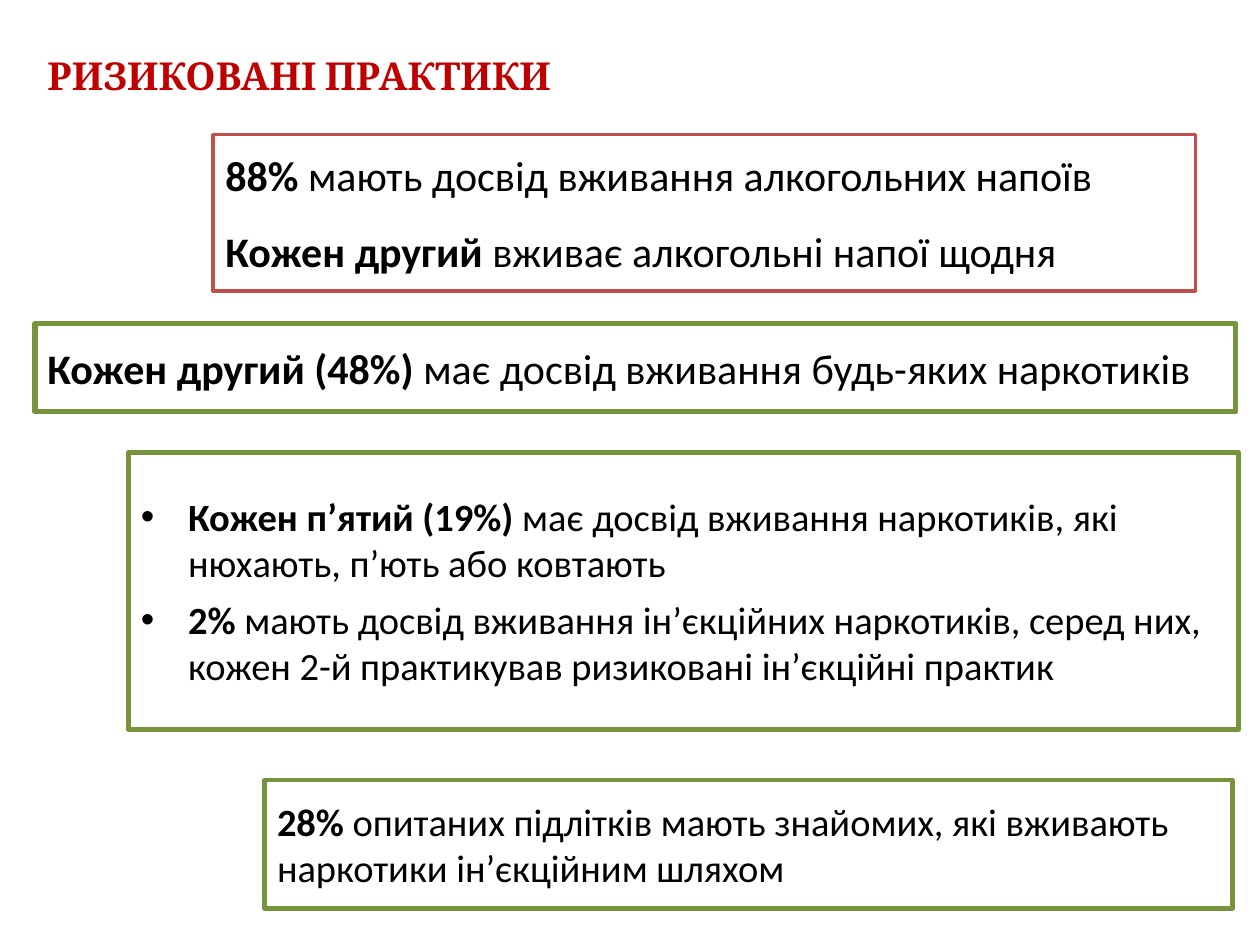
from pptx import Presentation
from pptx.dml.color import RGBColor
from pptx.enum.shapes import MSO_SHAPE
from pptx.enum.text import MSO_ANCHOR, PP_ALIGN
from pptx.oxml.ns import qn
from pptx.util import Pt
from lxml import etree

RECT = MSO_SHAPE.RECTANGLE
TOP, MIDDLE = MSO_ANCHOR.TOP, MSO_ANCHOR.MIDDLE
LEFT = PP_ALIGN.LEFT
RED, ROSE, GREEN = "C00000", "C0504D", "77933C"
BLACK, WHITE = "000000", "FFFFFF"
INDENT = 27


def color(code):
    return RGBColor.from_string(code)


def assign(item, values):
    for name, value in values.items():
        setattr(item, name, value)


def add_box(slide, place, fill=None, line=None, width=0, anchor=MIDDLE):
    box = slide.shapes.add_shape(RECT, *[Pt(n) for n in place])
    box.shadow.inherit = False
    if fill:
        box.fill.solid()
        box.fill.fore_color.rgb = color(fill)
    else:
        box.fill.background()
    if line:
        box.line.color.rgb = color(line)
        box.line.width = Pt(width)
    else:
        box.line.fill.background()
    assign(box.text_frame, {"word_wrap": True, "vertical_anchor": anchor})
    return box.text_frame


def add_run(para, text, size, bold, tint=BLACK, face="Calibri"):
    run = para.add_run()
    run.text = text
    assign(run.font, {"size": Pt(size), "bold": bold, "name": face})
    run.font.color.rgb = color(tint)


def add_bullet(para):
    props = para._p.get_or_add_pPr()
    props.set("marL", str(Pt(INDENT)))
    props.set("indent", str(Pt(-INDENT)))
    font = etree.SubElement(props, qn("a:buFont"))
    font.set("typeface", "Arial")
    mark = etree.SubElement(props, qn("a:buChar"))
    mark.set("char", "•")


def add_facts(frame, facts, size, gap=0, bullet=False):
    for i, (lead, rest) in enumerate(facts):
        para = frame.add_paragraph() if i else frame.paragraphs[0]
        after = gap if i < len(facts) - 1 else 0
        assign(para, {"alignment": LEFT, "space_after": Pt(after)})
        if bullet:
            add_bullet(para)
        add_run(para, lead + " ", size, True)
        add_run(para, rest, size, False)


def add_title(slide, text):
    frame = add_box(slide, (20, 26, 670, 466), WHITE, anchor=TOP)
    para = frame.paragraphs[0]
    para.alignment = LEFT
    add_run(para, text, 22, True, RED, "Cambria")


def main():
    deck = Presentation()
    assign(deck, {"slide_width": Pt(720), "slide_height": Pt(540)})
    slide = deck.slides.add_slide(deck.slide_layouts[6])

    add_title(slide, "РИЗИКОВАНІ ПРАКТИКИ")

    alcohol = add_box(slide, (121.7, 77, 561.6, 89.3), WHITE, ROSE, 2)
    add_facts(alcohol, [
        ("88%", "мають досвід вживання алкогольних напоїв"),
        ("Кожен другий", "вживає алкогольні напої щодня"),
    ], 24, gap=14.6)

    drugs = add_box(slide, (20, 185, 686.2, 50.4), None, GREEN, 3)
    add_facts(drugs, [
        ("Кожен другий (48%)", "має досвід вживання будь-яких наркотиків"),
    ], 24)

    kinds = add_box(slide, (73.4, 258.5, 634.3, 158.4), None, GREEN, 3)
    add_facts(kinds, [
        ("Кожен п’ятий (19%)",
         "має досвід вживання наркотиків, які нюхають, п’ють або ковтають"),
        ("2%",
         "мають досвід вживання ін’єкційних наркотиків, серед них, "
         "кожен 2-й практикував ризиковані ін’єкційні практик"),
    ], 22, gap=6, bullet=True)

    peers = add_box(slide, (151.2, 445.7, 553, 73.4), None, GREEN, 2.5)
    add_facts(peers, [
        ("28%",
         "опитаних підлітків мають знайомих, які вживають наркотики "
         "ін’єкційним шляхом"),
    ], 22)

    deck.save("out.pptx")


if __name__ == "__main__":
    main()
